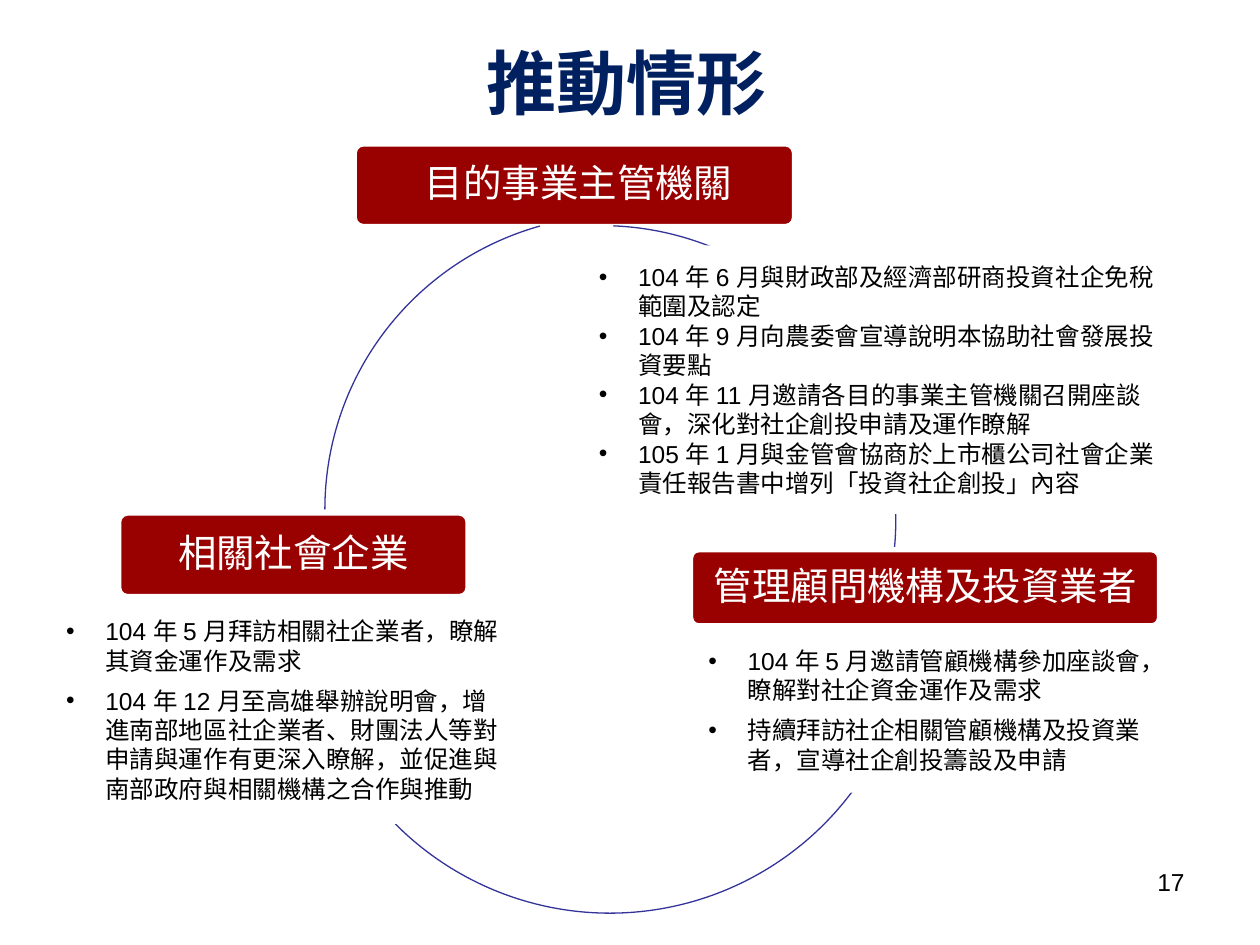
from dataclasses import dataclass

from lxml.etree import SubElement
from pptx import Presentation
from pptx.dml.color import RGBColor
from pptx.enum.shapes import MSO_SHAPE as Preset
from pptx.enum.text import MSO_ANCHOR as Anchor, PP_ALIGN as Align
from pptx.oxml.ns import qn
from pptx.util import Cm, Pt

WHITE = RGBColor(0xFF, 0xFF, 0xFF)
BLACK = RGBColor(0x00, 0x00, 0x00)
NAVY = RGBColor(0x00, 0x20, 0x60)
RED = RGBColor(0x99, 0x00, 0x00)
INDIGO = RGBColor(0x33, 0x33, 0x99)
LATIN_FONT = "Arial"
CHINESE_FONT = "Noto Sans CJK SC"
INDENT = Cm(0.79)

TITLE_FORMAT = {"size": Pt(40), "bold": True, "name": CHINESE_FONT}
LABEL_FORMAT = {"size": Pt(22), "name": CHINESE_FONT}
BODY_FORMAT = {"size": Pt(14), "name": LATIN_FONT}


@dataclass
class Box:
    left: float
    top: float
    width: float
    height: float

    def lengths(self) -> list:
        return [Cm(value) for value in (self.left, self.top, self.width, self.height)]


@dataclass
class Label:
    box: Box
    text: str


@dataclass
class Arc:
    left: float
    top: float
    diameter: float
    start: float
    end: float


@dataclass
class BulletList:
    box: Box
    items: list[str]
    space_before: int = 6


ARCS = [
    Arc(6.2, 4.55, 11.86, 272.3, 5.3),
    Arc(6.2, 6.22, 12.19, 3.8, 181.7),
    Arc(6.55, 4.34, 11.86, 180, 254.4),
]
LABELS = [
    Label(Box(7.16, 2.92, 8.84, 1.63), " 目的事業主管機關"),
    Label(Box(13.94, 11.1, 9.42, 1.5), "管理顧問機構及投資業者"),
    Label(Box(2.41, 10.36, 7.01, 1.65), "相關社會企業"),
]
LISTS = [
    BulletList(Box(11.56, 4.95, 12.45, 5.41), [
        "104 年 6 月與財政部及經濟部研商投資社企免稅範圍及認定",
        "104 年 9 月向農委會宣導說明本協助社會發展投資要點",
        "104 年 11 月邀請各目的事業主管機關召開座談會，深化對社企創投申請及運作瞭解",
        "105 年 1 月與金管會協商於上市櫃公司社會企業責任報告書中增列「投資社企創投」內容",
    ], space_before=0),
    BulletList(Box(13.87, 12.65, 9.93, 3.33), [
        "104 年 5 月邀請管顧機構參加座談會，瞭解對社企資金運作及需求",
        "持續拜訪社企相關管顧機構及投資業者，宣導社企創投籌設及申請",
    ]),
    BulletList(Box(0.86, 12.01, 9.88, 4.6), [
        "104 年 5 月拜訪相關社企業者，瞭解其資金運作及需求",
        "104 年 12 月至高雄舉辦說明會，增進南部地區社企業者、財團法人等對申請與運作有更深入瞭解，"
        "並促進與南部政府與相關機構之合作與推動",
    ]),
]


def write(paragraph, text: str, font_format: dict, color: RGBColor, align: Align) -> None:
    paragraph.alignment = align
    run = paragraph.add_run()
    run.text = text
    for name, value in font_format.items():
        setattr(run.font, name, value)
    run.font.color.rgb = color
    SubElement(run.font._element, qn("a:ea"), typeface=CHINESE_FONT)


def add_bullet(paragraph) -> None:
    properties = paragraph._p.get_or_add_pPr()
    properties.set("marL", str(INDENT))
    properties.set("indent", str(-INDENT))
    SubElement(properties, qn("a:buFont"), typeface=LATIN_FONT)
    SubElement(properties, qn("a:buChar"), char="•")


def draw_text(slide, box: Box, text: str, font_format: dict, color: RGBColor,
              align: Align, anchor: Anchor) -> None:
    frame = slide.shapes.add_textbox(*box.lengths()).text_frame
    frame.word_wrap = True
    frame.vertical_anchor = anchor
    write(frame.paragraphs[0], text, font_format, color, align)


def draw_panel(slide, box: Box, fill: RGBColor):
    shape = slide.shapes.add_shape(Preset.ROUNDED_RECTANGLE, *box.lengths())
    shape.shadow.inherit = False
    shape.fill.solid()
    shape.fill.fore_color.rgb = fill
    shape.text_frame.word_wrap = True
    shape.text_frame.vertical_anchor = Anchor.MIDDLE
    return shape


def draw_label(slide, label: Label) -> None:
    shape = draw_panel(slide, label.box, RED)
    shape.adjustments[0] = 0.1
    shape.line.color.rgb = WHITE
    shape.line.width = Pt(2)
    paragraph = shape.text_frame.paragraphs[0]
    paragraph.line_spacing = 0.9
    write(paragraph, label.text, LABEL_FORMAT, WHITE, Align.CENTER)


def draw_arc(slide, arc: Arc) -> None:
    box = Box(arc.left, arc.top, arc.diameter, arc.diameter)
    shape = slide.shapes.add_shape(Preset.ARC, *box.lengths())
    shape.shadow.inherit = False
    shape.fill.background()
    shape.line.color.rgb = INDIGO
    shape.line.width = Pt(0.75)
    for index, degrees in enumerate((arc.start, arc.end)):
        shape.adjustments[index] = degrees * 0.6


def draw_list(slide, bullet_list: BulletList) -> None:
    shape = draw_panel(slide, bullet_list.box, WHITE)
    shape.line.fill.background()
    frame = shape.text_frame
    for index, item in enumerate(bullet_list.items):
        paragraph = frame.add_paragraph() if index else frame.paragraphs[0]
        paragraph.space_before = Pt(bullet_list.space_before if index else 0)
        add_bullet(paragraph)
        write(paragraph, item, BODY_FORMAT, BLACK, Align.LEFT)


def main() -> None:
    presentation = Presentation()
    presentation.slide_width = Cm(25.4)
    presentation.slide_height = Cm(19.05)
    slide = presentation.slides.add_slide(presentation.slide_layouts[6])
    draw_text(slide, Box(2.62, 0.58, 20.02, 2.03), "推動情形", TITLE_FORMAT, NAVY,
              Align.CENTER, Anchor.BOTTOM)
    for label, arc in zip(LABELS, ARCS):
        draw_label(slide, label)
        draw_arc(slide, arc)
    for bullet_list in LISTS:
        draw_list(slide, bullet_list)
    draw_text(slide, Box(18.21, 17.35, 5.92, 1.32), "17", BODY_FORMAT, BLACK,
              Align.RIGHT, Anchor.TOP)
    presentation.save("out.pptx")


if __name__ == "__main__":
    main()
